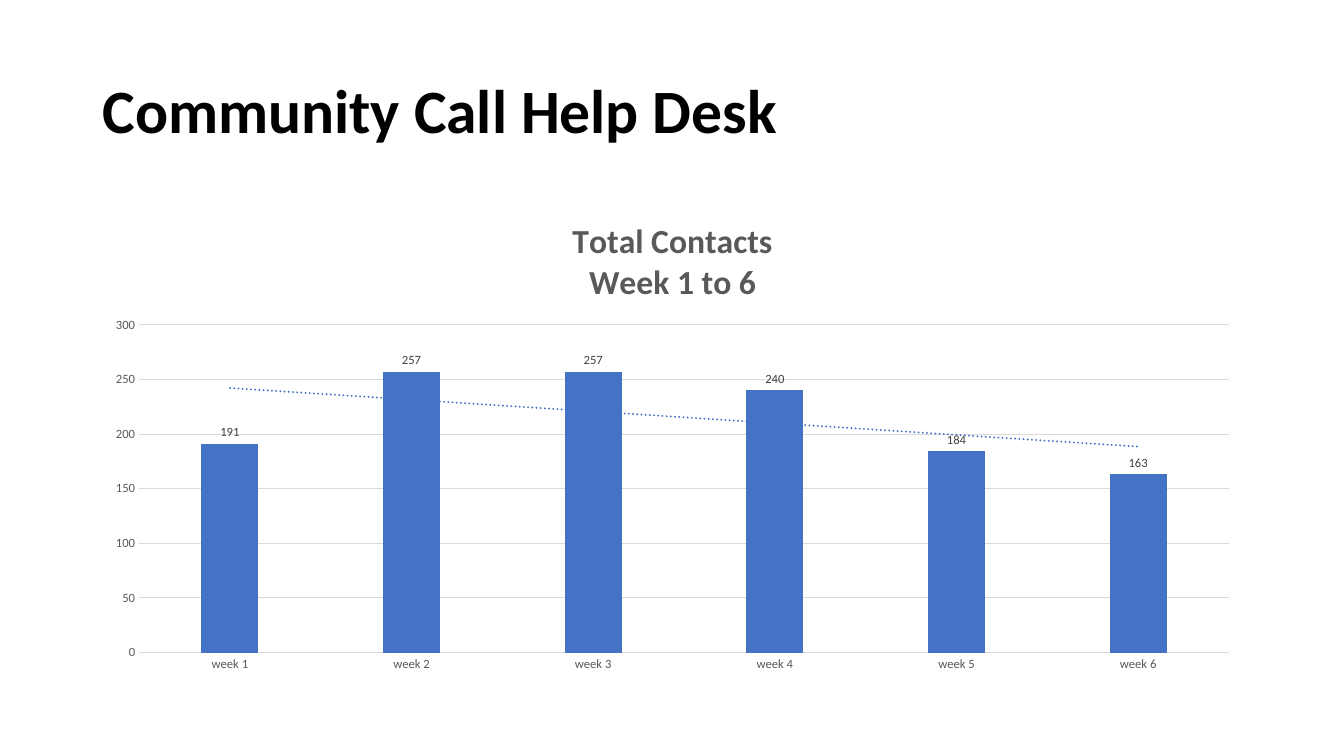
from lxml import etree
from pptx import Presentation
from pptx.chart.data import CategoryChartData
from pptx.dml.color import RGBColor
from pptx.enum.chart import XL_CHART_TYPE, XL_LABEL_POSITION, XL_TICK_MARK
from pptx.enum.text import MSO_ANCHOR
from pptx.oxml import parse_xml
from pptx.oxml.ns import nsdecls
from pptx.util import Inches, Pt

BLUE, GRID, GREY, DARK_GREY, BLACK = "4472C4", "D9D9D9", "595959", "404040", "000000"
LEFT, WIDTH = 0.92, 11.5
WEEKLY_CONTACTS = {
    "week 1": 191,
    "week 2": 257,
    "week 3": 257,
    "week 4": 240,
    "week 5": 184,
    "week 6": 163,
}


def rgb(value):
    return RGBColor.from_string(value)


class HelpDeskSlide:
    font_name = "Calibri"

    def __init__(self, presentation):
        self.slide = presentation.slides.add_slide(presentation.slide_layouts[6])

    def style(self, font, size, color, bold=False):
        font.name = self.font_name
        font.size = Pt(size)
        font.bold = bold
        font.color.rgb = rgb(color)

    def heading(self, text, top, height):
        frame = self.slide.shapes.add_textbox(
            Inches(LEFT), Inches(top), Inches(WIDTH), Inches(height)
        ).text_frame
        frame.word_wrap = True
        frame.vertical_anchor = MSO_ANCHOR.MIDDLE
        paragraph = frame.paragraphs[0]
        paragraph.text = text
        paragraph.line_spacing = 0.9
        self.style(paragraph.font, 44, BLACK, bold=True)

    def column_chart(self, title_lines, values, top, height):
        data = CategoryChartData()
        data.categories = list(values)
        data.add_series("Series 1", list(values.values()))
        chart = self.slide.shapes.add_chart(
            XL_CHART_TYPE.COLUMN_CLUSTERED,
            Inches(LEFT), Inches(top), Inches(WIDTH), Inches(height), data,
        ).chart
        self.style(chart.font, 10, BLACK)
        chart.has_legend = False
        self.chart_title(chart, title_lines)
        self.axes(chart)
        self.columns(chart.plots[0])
        self.plot_layout(chart, x=0.04, y=0.257, w=0.94, h=0.683)

    def chart_title(self, chart, lines):
        chart.has_title = True
        chart.chart_title.include_in_layout = False
        frame = chart.chart_title.text_frame
        frame.text = "\n".join(lines)
        for paragraph in frame.paragraphs:
            self.style(paragraph.font, 24, GREY, bold=True)

    def axes(self, chart):
        weeks, contacts = chart.category_axis, chart.value_axis
        for axis in (weeks, contacts):
            axis.major_tick_mark = axis.minor_tick_mark = XL_TICK_MARK.NONE
            self.style(axis.tick_labels.font, 9, GREY)
        contacts.minimum_scale, contacts.maximum_scale = 0, 300
        contacts.major_unit = 50
        contacts.format.line.fill.background()
        for line in (weeks.format.line, contacts.major_gridlines.format.line):
            line.color.rgb = rgb(GRID)
            line.width = Pt(0.75)

    def columns(self, plot):
        plot.gap_width, plot.overlap = 219, -27
        plot.vary_by_categories = False
        series = plot.series[0]
        series.format.fill.solid()
        series.format.fill.fore_color.rgb = rgb(BLUE)
        labels = series.data_labels
        labels.show_value = True
        labels.position = XL_LABEL_POSITION.OUTSIDE_END
        self.style(labels.font, 9, DARK_GREY)
        self.trend_line(series)

    def trend_line(self, series):
        """Add a dotted linear trend, which must precede the categories."""
        trend = parse_xml(
            f'<c:trendline {nsdecls("c", "a")}><c:spPr>'
            f'<a:ln w="{Pt(1.5)}" cap="rnd"><a:solidFill><a:srgbClr val="{BLUE}"/>'
            '</a:solidFill><a:prstDash val="sysDot"/></a:ln></c:spPr>'
            '<c:trendlineType val="linear"/><c:dispRSqr val="0"/>'
            '<c:dispEq val="0"/></c:trendline>'
        )
        series._element.find("{*}cat").addprevious(trend)

    def plot_layout(self, chart, **fractions):
        """Fix the inner plot area as fractions of the chart's size."""
        plot_area = chart._chartSpace.chart.plotArea
        for automatic in plot_area.findall("{*}layout"):
            plot_area.remove(automatic)
        layout = parse_xml(
            f'<c:layout {nsdecls("c")}><c:manualLayout><c:layoutTarget val="inner"/>'
            '<c:xMode val="edge"/><c:yMode val="edge"/></c:manualLayout></c:layout>'
        )
        namespace = etree.QName(layout).namespace
        for side, fraction in fractions.items():
            etree.SubElement(layout[0], f"{{{namespace}}}{side}").set("val", str(fraction))
        plot_area.insert(0, layout)


def main():
    presentation = Presentation()
    presentation.slide_width = Inches(13.33)
    presentation.slide_height = Inches(7.5)
    slide = HelpDeskSlide(presentation)
    slide.heading("Community Call Help Desk", top=0.4, height=1.45)
    slide.column_chart(
        ["Total Contacts", "Week 1 to 6"], WEEKLY_CONTACTS, top=2, height=4.76
    )
    presentation.save("out.pptx")


if __name__ == "__main__":
    main()
